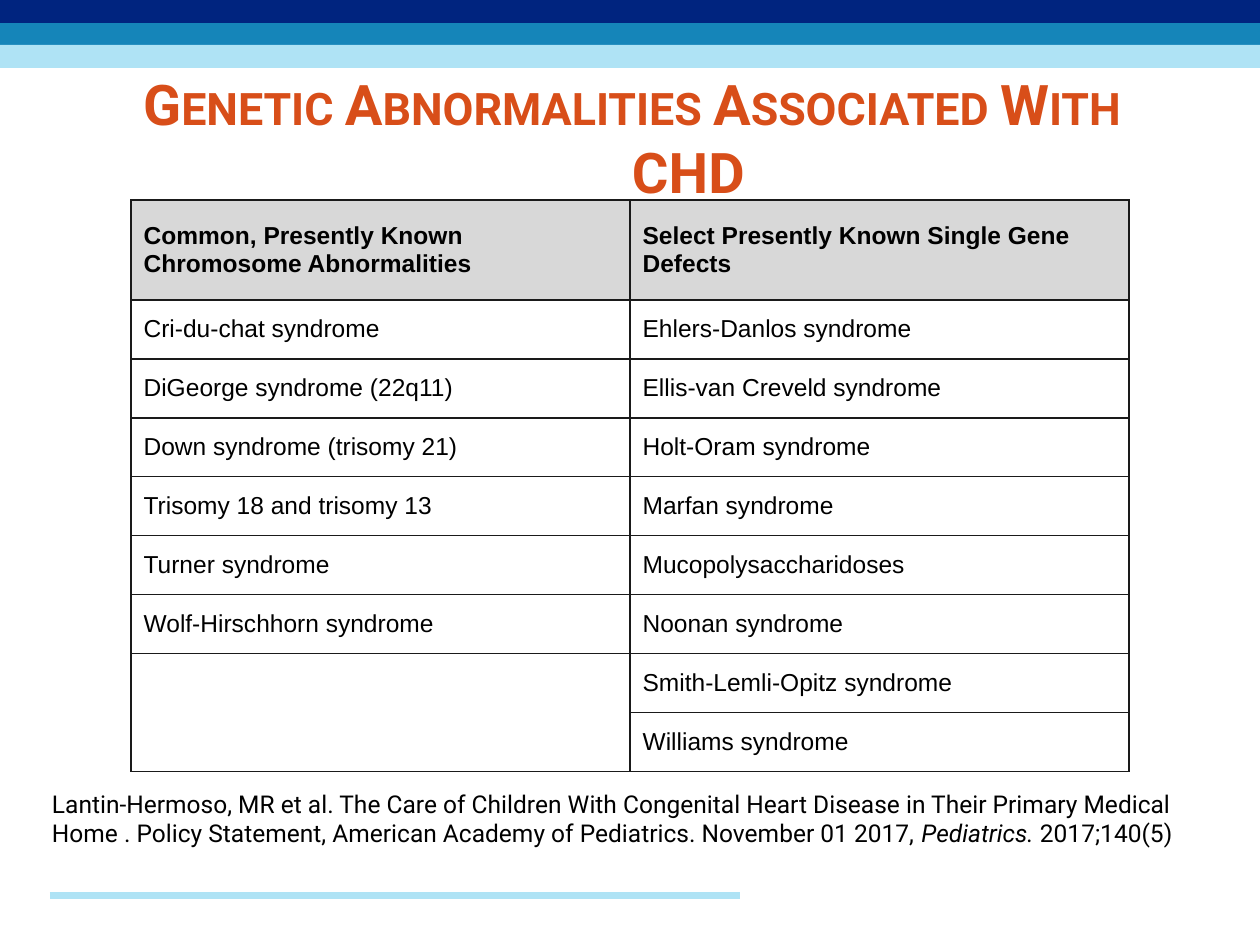
import pptx
import pptx.util
import pptx.dml.color
import pptx.enum.shapes
import pptx.enum.text
import pptx.oxml.ns
from dataclasses import dataclass
from lxml import etree

# Content
TITLE = "Genetic Abnormalities Associated With CHD"
HEADERS = ("Common, Presently Known Chromosome Abnormalities",
           "Select Presently Known Single Gene Defects")
CHROMOSOME = ["Cri-du-chat syndrome", "DiGeorge syndrome (22q11)",
              "Down syndrome (trisomy 21)", "Trisomy 18 and trisomy 13",
              "Turner syndrome", "Wolf-Hirschhorn syndrome"]
SINGLE_GENE = ["Ehlers-Danlos syndrome", "Ellis-van Creveld syndrome",
               "Holt-Oram syndrome", "Marfan syndrome", "Mucopolysaccharidoses",
               "Noonan syndrome", "Smith-Lemli-Opitz syndrome", "Williams syndrome"]
# Each span: text, italic
CITATION = [
    ("Lantin-Hermoso, MR et al. The Care of Children With Congenital Heart Disease "
     "in Their Primary Medical Home . Policy Statement, American Academy of "
     "Pediatrics. November 01 2017, ", False),
    ("Pediatrics. ", True),
    ("2017;140(5)", False),
]


@dataclass(frozen=True)
class Theme:
    navy: str = "00247F"
    blue: str = "1585B9"
    pale: str = "AFE3F5"
    orange: str = "D84E19"
    black: str = "000000"
    white: str = "FFFFFF"
    header: str = "D8D8D8"
    border: str = "1A1A1A"
    heading_font: str = "Roboto"
    table_font: str = "Arial"
    title_size: int = 32
    text_size: int = 14
    border_width: float = 0.75
    rule_width: int = 4


THEME = Theme()
PX = 914400 / 126
A = pptx.oxml.ns.qn


def px(*lengths):
    return [pptx.util.Emu(round(length * PX)) for length in lengths]


def color(value):
    return pptx.dml.color.RGBColor.from_string(value)


def fill(part, value):
    part.fill.solid()
    part.fill.fore_color.rgb = color(value)


def add_span(para, text, font, size, ink, bold=False, italic=False):
    span = para.add_run()
    span.text = text
    span.font.name = font
    span.font.size = pptx.util.Pt(size)
    span.font.color.rgb = color(ink)
    span.font.bold = bold
    span.font.italic = italic
    return span


def prepare_frame(frame):
    frame.word_wrap = True
    frame.auto_size = pptx.enum.text.MSO_AUTO_SIZE.NONE
    frame.margin_left = frame.margin_right = 0
    frame.margin_top = frame.margin_bottom = 0


def add_borders(cell):
    properties = cell._tc.get_or_add_tcPr()
    for side in ("a:lnL", "a:lnR", "a:lnT", "a:lnB"):
        line = etree.SubElement(properties, A(side))
        line.set("w", str(pptx.util.Pt(THEME.border_width)))
        solid = etree.SubElement(line, A("a:solidFill"))
        etree.SubElement(solid, A("a:srgbClr")).set("val", THEME.border)


def add_bands(page):
    edges = (0, 23, 45, 68)
    for top, bottom, shade in zip(edges, edges[1:], (THEME.navy, THEME.blue, THEME.pale)):
        band = page.shapes.add_shape(pptx.enum.shapes.MSO_SHAPE.RECTANGLE,
                                     *px(0, top, 1260, bottom - top))
        band.shadow.inherit = False
        fill(band, shade)
        band.line.fill.background()


def add_footer_rule(page):
    rule = page.shapes.add_connector(pptx.enum.shapes.MSO_CONNECTOR.STRAIGHT,
                                     *px(50, 896, 740, 896))
    rule.line.color.rgb = color(THEME.pale)
    rule.line.width = pptx.util.Pt(THEME.rule_width)
    etree.SubElement(rule._element.spPr, A("a:effectLst"))


def add_title(page):
    box = page.shapes.title
    box.left, box.top, box.width, box.height = px(120, 112, 1024, 50)
    fill(box, THEME.white)
    frame = box.text_frame
    prepare_frame(frame)
    frame.vertical_anchor = pptx.enum.text.MSO_ANCHOR.MIDDLE
    para = frame.paragraphs[0]
    para.alignment = pptx.enum.text.PP_ALIGN.CENTER
    span = add_span(para, TITLE, THEME.heading_font, THEME.title_size,
                    THEME.orange, bold=True)
    span.font._element.set("cap", "small")


def add_syndrome_table(page):
    header_height, row_height, column_width = 100, 59, 499
    row_count = 1 + max(len(CHROMOSOME), len(SINGLE_GENE))
    height = header_height + row_height * (row_count - 1)
    table = page.shapes.add_table(row_count, 2,
                                  *px(131, 200, 2 * column_width, height)).table
    table.horz_banding = False
    for column in table.columns:
        column.width = px(column_width)[0]
    for index, row in enumerate(table.rows):
        row.height = px(row_height if index else header_height)[0]

    for column, names in enumerate((CHROMOSOME, SINGLE_GENE)):
        texts = [HEADERS[column], *names]
        for index in range(row_count):
            cell = table.cell(index, column)
            add_borders(cell)
            cell.vertical_anchor = pptx.enum.text.MSO_ANCHOR.MIDDLE
            fill(cell, THEME.white if index else THEME.header)
            if index < len(texts):
                add_span(cell.text_frame.paragraphs[0], texts[index], THEME.table_font,
                         THEME.text_size, THEME.black, bold=index == 0)
    # The shorter column ends in one merged empty cell
    table.cell(len(CHROMOSOME) + 1, 0).merge(table.cell(row_count - 1, 0))


def add_citation(page):
    frame = page.shapes.add_textbox(*px(52, 789, 1173, 59)).text_frame
    prepare_frame(frame)
    for text, italic in CITATION:
        add_span(frame.paragraphs[0], text, THEME.heading_font, THEME.text_size,
                 THEME.black, italic=italic)


def main():
    deck = pptx.Presentation()
    deck.slide_width, deck.slide_height = px(1260, 945)
    page = deck.slides.add_slide(deck.slide_layouts.get_by_name("Title Only"))
    add_bands(page)
    add_footer_rule(page)
    add_title(page)
    add_citation(page)
    add_syndrome_table(page)
    deck.save("out.pptx")


if __name__ == "__main__":
    main()
